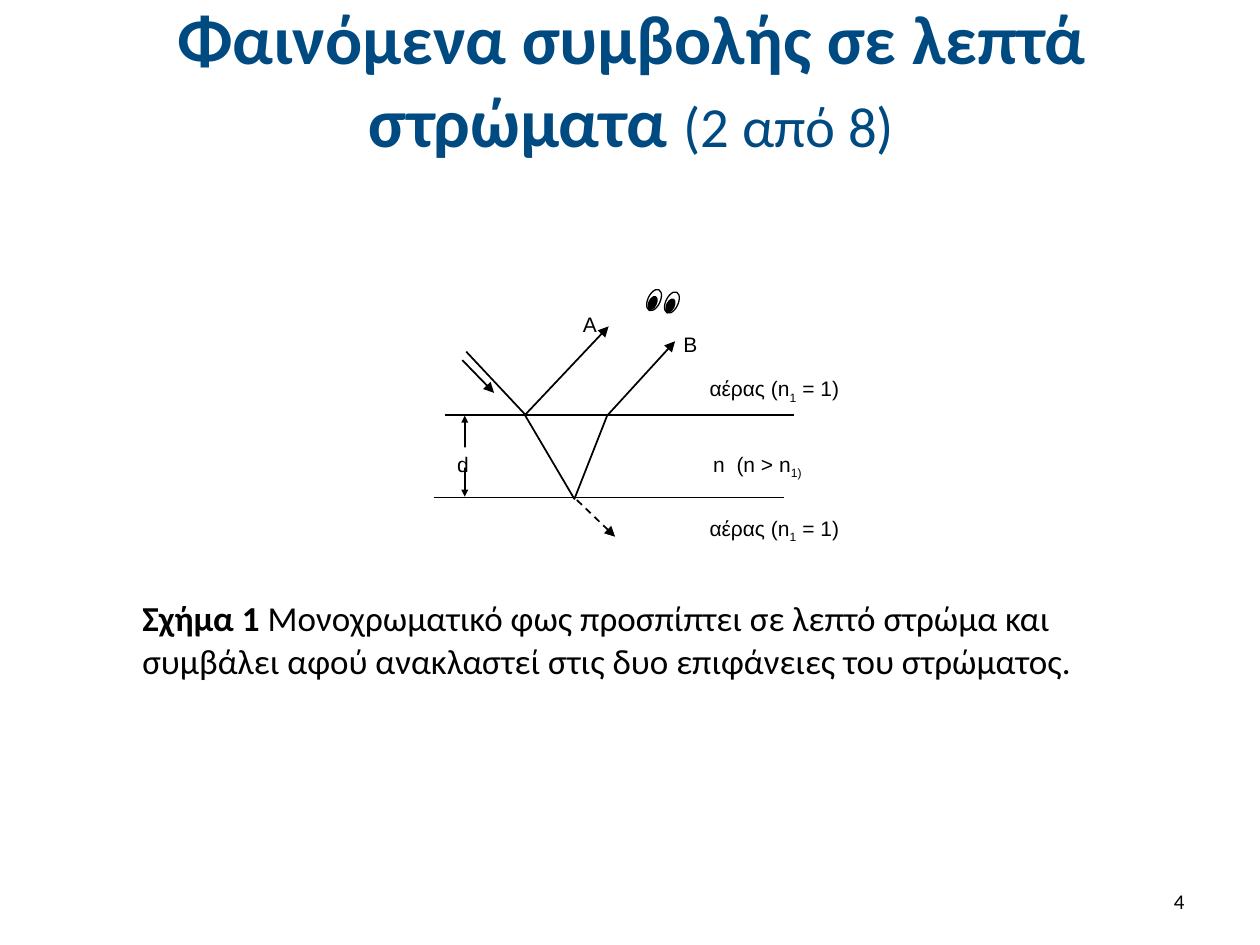
from dataclasses import dataclass

from lxml import etree
from pptx import Presentation
from pptx.dml.color import RGBColor
from pptx.enum.dml import MSO_LINE
from pptx.enum.shapes import MSO_CONNECTOR, MSO_SHAPE
from pptx.enum.text import MSO_ANCHOR, PP_ALIGN
from pptx.oxml.ns import qn
from pptx.util import Cm, Pt

OVAL, RECTANGLE = MSO_SHAPE.OVAL, MSO_SHAPE.RECTANGLE
STRAIGHT, DASH = MSO_CONNECTOR.STRAIGHT, MSO_LINE.DASH
TOP, MIDDLE = MSO_ANCHOR.TOP, MSO_ANCHOR.MIDDLE
LEFT, CENTER, RIGHT = PP_ALIGN.LEFT, PP_ALIGN.CENTER, PP_ALIGN.RIGHT


@dataclass(frozen=True)
class Theme:
    title: RGBColor = RGBColor(0x00, 0x4A, 0x82)
    ink: RGBColor = RGBColor(0, 0, 0)
    paper: RGBColor = RGBColor(0xFF, 0xFF, 0xFF)
    body_font: str = "Calibri"
    label_font: str = "Arial"
    title_size: float = 39.6
    counter_size: float = 32.4
    caption_size: float = 20
    label_size: float = 12
    ray_width: float = 1
    eye_width: float = 0.75


THEME = Theme()


@dataclass(frozen=True)
class Box:
    left: float
    top: float
    width: float
    height: float

    def lengths(self) -> tuple:
        return Cm(self.left), Cm(self.top), Cm(self.width), Cm(self.height)

    def moved(self, dx: float, dy: float) -> "Box":
        return Box(self.left + dx, self.top + dy, self.width, self.height)


@dataclass(frozen=True)
class Piece:
    text: str
    bold: bool | None = None
    size: float | None = None
    subscript: bool = False


@dataclass(frozen=True)
class Label:
    box: Box
    pieces: tuple[Piece, ...]
    masks: bool = False


@dataclass(frozen=True)
class Ray:
    points: tuple[tuple[float, float], ...]
    tail: bool = False
    head: bool = False
    dashed: bool = False
    arrow_size: str = "med"


def write(frame, pieces, font, size, color, align=LEFT, anchor=TOP):
    frame.word_wrap = True
    frame.vertical_anchor = anchor
    paragraph = frame.paragraphs[0]
    paragraph.alignment = align
    paragraph.font.name = font
    paragraph.font.size = Pt(size)
    paragraph.font.color.rgb = color
    for piece in pieces:
        run = paragraph.add_run()
        run.text = piece.text
        if piece.bold is not None:
            run.font.bold = piece.bold
        if piece.size is not None:
            run.font.size = Pt(piece.size)
        if piece.subscript:
            run._r.get_or_add_rPr().set("baseline", "-25000")
    return paragraph


def add_text(slide, box: Box, pieces, size, color, align=LEFT, anchor=TOP) -> None:
    frame = slide.shapes.add_textbox(*box.lengths()).text_frame
    write(frame, pieces, THEME.body_font, size, color, align, anchor)


def add_label(slide, label: Label) -> None:
    if label.masks:
        holder = slide.shapes.add_shape(RECTANGLE, *label.box.lengths())
        holder.shadow.inherit = False
        holder.fill.solid()
        holder.fill.fore_color.rgb = THEME.paper
        holder.line.fill.background()
    else:
        holder = slide.shapes.add_textbox(*label.box.lengths())
    frame = holder.text_frame
    frame.margin_left = frame.margin_right = frame.margin_top = frame.margin_bottom = 0
    paragraph = write(frame, label.pieces, THEME.label_font, THEME.label_size, THEME.ink, CENTER)
    paragraph.line_spacing = 1.15
    paragraph.space_after = Pt(10)


def add_oval(slide, box: Box, fill: RGBColor) -> None:
    oval = slide.shapes.add_shape(OVAL, *box.lengths())
    oval.shadow.inherit = False
    oval.rotation = 25.2
    oval.fill.solid()
    oval.fill.fore_color.rgb = fill
    oval.line.color.rgb = THEME.ink
    oval.line.width = Pt(THEME.eye_width)


def add_ray(slide, ray: Ray) -> None:
    points = [(Cm(x), Cm(y)) for x, y in ray.points]
    if len(points) == 2:
        path = slide.shapes.add_connector(STRAIGHT, *points[0], *points[1])
        etree.SubElement(path._element.spPr, qn("a:effectLst"))
    else:
        builder = slide.shapes.build_freeform(*points[0])
        builder.add_line_segments(points[1:], close=False)
        path = builder.convert_to_shape()
        path.shadow.inherit = False
        path.fill.background()
    path.line.color.rgb = THEME.ink
    path.line.width = Pt(THEME.ray_width)
    if ray.dashed:
        path.line.dash_style = DASH
    outline = path._element.spPr.find(qn("a:ln"))
    for tag, wanted in (("a:headEnd", ray.head), ("a:tailEnd", ray.tail)):
        if wanted:
            etree.SubElement(outline, qn(tag), type="triangle", w=ray.arrow_size, len=ray.arrow_size)


AIR = (Piece("αέρας (n"), Piece("1", subscript=True), Piece(" = 1)"))
EYE = Box(13.06, 5.82, 0.25, 0.46)
PUPIL = Box(13.08, 5.97, 0.15, 0.28)
EYE_OFFSETS = ((0, 0), (0.36, 0.05))

RAYS = (
    Ray(((8.97, 8.36), (16, 8.36))),
    Ray(((8.74, 10.03), (15.8, 10.03))),
    Ray(((9.4, 7.09), (10.59, 8.36), (12.27, 6.58)), tail=True),
    Ray(((10.59, 8.38), (11.58, 10.06), (12.24, 8.38), (13.61, 6.88)), tail=True),
    Ray(((9.37, 8.38), (9.37, 10.01)), tail=True, head=True, arrow_size="sm"),
    Ray(((11.63, 10.08), (12.4, 10.82)), tail=True, dashed=True),
    Ray(((9.32, 7.26), (9.96, 7.92)), tail=True),
)

LABELS = (
    Label(Box(8.97, 9.02, 0.84, 0.41), (Piece("d "),), masks=True),
    Label(Box(14.15, 7.49, 2.92, 0.53), AIR),
    Label(Box(13.64, 6.6, 0.56, 0.53), (Piece("B"),)),
    Label(Box(11.61, 6.2, 0.56, 0.53), (Piece("A"),)),
    Label(Box(14.15, 9.02, 2.24, 0.58), (Piece("n  (n > n"), Piece("1)", subscript=True)), masks=True),
    Label(Box(14.15, 10.31, 2.92, 0.53), AIR),
)

TITLE = (
    Piece("Φαινόμενα συμβολής σε λεπτά στρώματα ", bold=True),
    Piece("(2 από 8)", bold=False, size=THEME.counter_size),
)
CAPTION = (
    Piece("Σχήμα 1 ", bold=True),
    Piece(
        "Μονοχρωματικό φως προσπίπτει σε λεπτό στρώμα και συμβάλει "
        "αφού ανακλαστεί στις δυο επιφάνειες του στρώματος.",
        bold=False,
    ),
)


def main() -> None:
    deck = Presentation()
    deck.slide_width, deck.slide_height = Cm(25.4), Cm(19.05)
    slide = deck.slides.add_slide(deck.slide_layouts[6])
    add_text(slide, Box(1.3, 0.33, 22.86, 2.51), TITLE, THEME.title_size, THEME.title, CENTER, MIDDLE)
    add_text(slide, Box(18.21, 17.65, 5.92, 1.02), (Piece("4"),), THEME.label_size, THEME.ink, RIGHT, MIDDLE)
    for offset in EYE_OFFSETS:
        add_oval(slide, EYE.moved(*offset), THEME.paper)
        add_oval(slide, PUPIL.moved(*offset), THEME.ink)
    for ray in RAYS:
        add_ray(slide, ray)
    for label in LABELS:
        add_label(slide, label)
    add_text(slide, Box(2.62, 11.91, 21.11, 1.96), CAPTION, THEME.caption_size, THEME.ink)
    deck.save("out.pptx")


if __name__ == "__main__":
    main()
